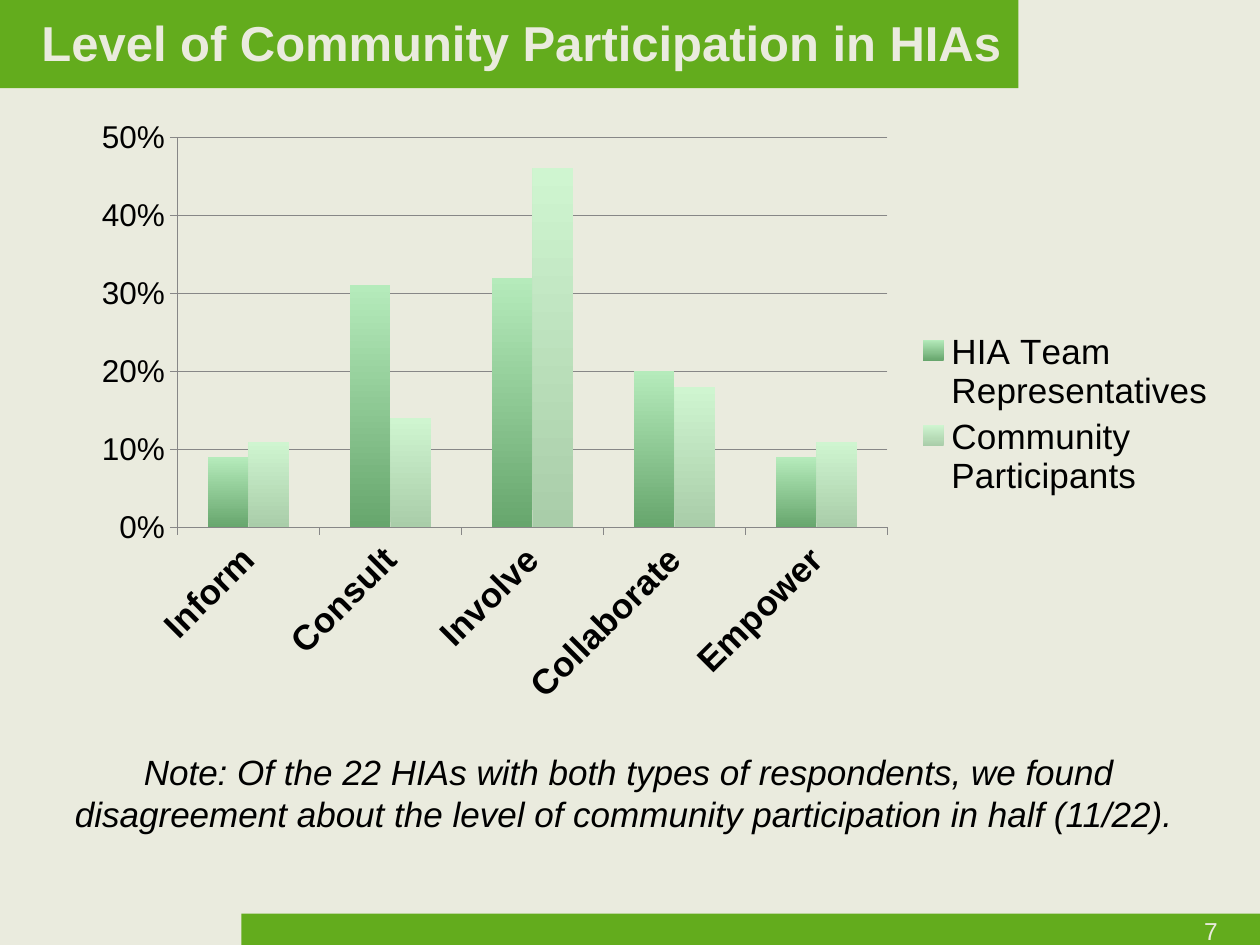
from dataclasses import dataclass

from lxml.etree import SubElement
from pptx import Presentation
from pptx.chart.data import CategoryChartData
from pptx.dml.color import RGBColor
from pptx.enum.chart import XL_CHART_TYPE, XL_LEGEND_POSITION, XL_TICK_MARK
from pptx.enum.shapes import MSO_SHAPE
from pptx.enum.text import MSO_ANCHOR, PP_ALIGN
from pptx.oxml import parse_xml
from pptx.oxml.ns import nsdecls, qn
from pptx.util import Pt


@dataclass(frozen=True)
class Theme:
    font: str = "Arial"
    background: str = "EAEBDE"
    band: str = "63AC1D"
    text: str = "000000"
    grid: str = "878787"
    series: tuple = (("67A66D", "B5EBBB"), ("A9CDA9", "CFF5D0"))
    title_size: int = 28
    body_size: int = 20
    axis_size: int = 18
    number_size: int = 14


class SlideBuilder:
    def __init__(self, slide, theme):
        self.slide = slide
        self.theme = theme
        fill = slide.background.fill
        fill.solid()
        fill.fore_color.rgb = RGBColor.from_string(theme.background)

    def style_font(self, font, size, color, bold=False, italic=False):
        font.name = self.theme.font
        font.size = Pt(size)
        font.bold = bold
        font.italic = italic
        font.color.rgb = RGBColor.from_string(color)

    def band(self, left, top, width, height):
        shape = self.slide.shapes.add_shape(
            MSO_SHAPE.RECTANGLE, Pt(left), Pt(top), Pt(width), Pt(height))
        shape.shadow.inherit = False
        shape.fill.solid()
        shape.fill.fore_color.rgb = RGBColor.from_string(self.theme.band)
        shape.line.fill.background()

    def fill_text(self, shape, text, alignment, size, color, **style):
        frame = shape.text_frame
        frame.word_wrap = True
        paragraph = frame.paragraphs[0]
        paragraph.alignment = alignment
        run = paragraph.add_run()
        run.text = text
        self.style_font(run.font, size, color, **style)

    def title(self, text, left, top, width, height):
        shape = self.slide.shapes.title
        shape.left, shape.top = Pt(left), Pt(top)
        shape.width, shape.height = Pt(width), Pt(height)
        shape.text_frame.vertical_anchor = MSO_ANCHOR.MIDDLE
        self.fill_text(shape, text, PP_ALIGN.LEFT, self.theme.title_size,
                       self.theme.background, bold=True)

    def text(self, text, left, top, width, height, alignment, size, color, **style):
        shape = self.slide.shapes.add_textbox(
            Pt(left), Pt(top), Pt(width), Pt(height))
        self.fill_text(shape, text, alignment, size, color, **style)

    def place(self, element, x, y, width, height, inner=False):
        layout = element.find(qn("c:layout"))
        if layout is None:
            layout = parse_xml(f"<c:layout {nsdecls('c')}/>")
            if inner:
                element.insert(0, layout)
            else:
                element.find(qn("c:legendPos")).addnext(layout)
        manual = SubElement(layout, qn("c:manualLayout"))
        settings = [("layoutTarget", "inner")] if inner else []
        settings += [("xMode", "edge"), ("yMode", "edge"),
                     ("x", x), ("y", y), ("w", width), ("h", height)]
        for name, value in settings:
            SubElement(manual, qn(f"c:{name}")).set("val", str(value))

    def column_chart(self, categories, series, left, top, width, height):
        theme = self.theme
        data = CategoryChartData(number_format="0%")
        data.categories = categories
        for name, values in series.items():
            data.add_series(name, values)
        chart = self.slide.shapes.add_chart(
            XL_CHART_TYPE.COLUMN_CLUSTERED,
            Pt(left), Pt(top), Pt(width), Pt(height), data).chart
        chart.has_title = False
        self.style_font(chart.font, theme.axis_size, theme.text)

        plot = chart.plots[0]
        plot.gap_width = 150
        plot.overlap = 0
        plot.vary_by_categories = False
        for column, colors in zip(plot.series, theme.series):
            fill = column.format.fill
            fill.gradient()
            fill.gradient_angle = 90
            for stop, color in zip(fill.gradient_stops, colors):
                stop.color.rgb = RGBColor.from_string(color)

        value_axis = chart.value_axis
        value_axis.minimum_scale = 0
        value_axis.maximum_scale = 0.5
        value_axis.major_unit = 0.1
        value_axis.has_major_gridlines = True
        value_axis.tick_labels.number_format = "0%"
        value_axis.tick_labels.number_format_is_linked = False
        self.style_font(value_axis.tick_labels.font, theme.axis_size, theme.text)

        category_axis = chart.category_axis
        self.style_font(category_axis.tick_labels.font, theme.body_size,
                        theme.text, bold=True)
        category_axis._element.find(qn("c:txPr")).find(
            qn("a:bodyPr")).set("rot", "-2700000")

        for axis in (value_axis, category_axis):
            axis.major_tick_mark = XL_TICK_MARK.OUTSIDE
            axis.minor_tick_mark = XL_TICK_MARK.NONE
        for part in (value_axis, category_axis, value_axis.major_gridlines):
            part.format.line.color.rgb = RGBColor.from_string(theme.grid)
            part.format.line.width = Pt(0.75)

        chart.has_legend = True
        legend = chart.legend
        legend.position = XL_LEGEND_POSITION.RIGHT
        legend.include_in_layout = False
        self.style_font(legend.font, theme.body_size, theme.text)
        self.place(legend._element, 0.72, 0.36, 0.27, 0.29)
        plot_area = chart._chartSpace.chart.plotArea
        self.place(plot_area, 0.08, 0.05, 0.62, 0.64, inner=True)


def main():
    theme = Theme()
    presentation = Presentation()
    presentation.slide_width = Pt(720)
    presentation.slide_height = Pt(540)
    slide = presentation.slides.add_slide(presentation.slide_layouts[5])
    builder = SlideBuilder(slide, theme)

    builder.band(138, 522, 582, 18)
    builder.band(0, 0, 582, 50.4)
    title = slide.shapes.title._element
    title.getparent().append(title)
    builder.title("Level of Community Participation in HIAs", 16.5, 0, 579.5, 48)
    builder.text("7", 553, 520, 150, 18, PP_ALIGN.RIGHT,
                 theme.number_size, theme.background)
    builder.text(
        "Note: Of the 22 HIAs with both types of respondents, we found "
        "disagreement about the level of community participation in half (11/22). ",
        16.5, 425.5, 686, 55.5, PP_ALIGN.CENTER,
        theme.body_size, theme.text, italic=True)
    builder.column_chart(
        ["Inform", "Consult", "Involve", "Collaborate", "Empower"],
        {"HIA Team Representatives": (0.09, 0.31, 0.32, 0.2, 0.09),
         "Community Participants": (0.11, 0.14, 0.46, 0.18, 0.11)},
        49, 61, 654.5, 348.5)
    presentation.save("out.pptx")


if __name__ == "__main__":
    main()
